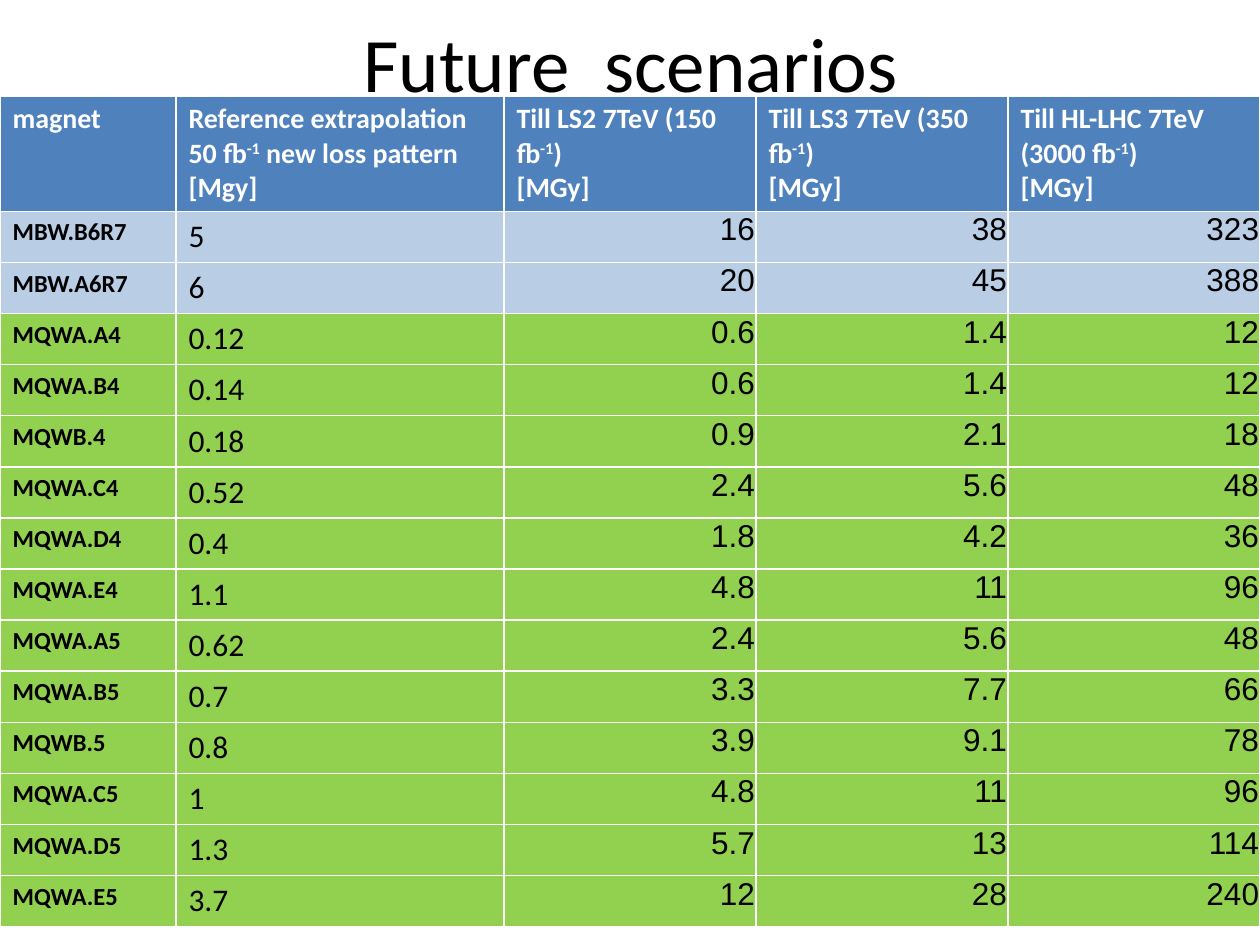
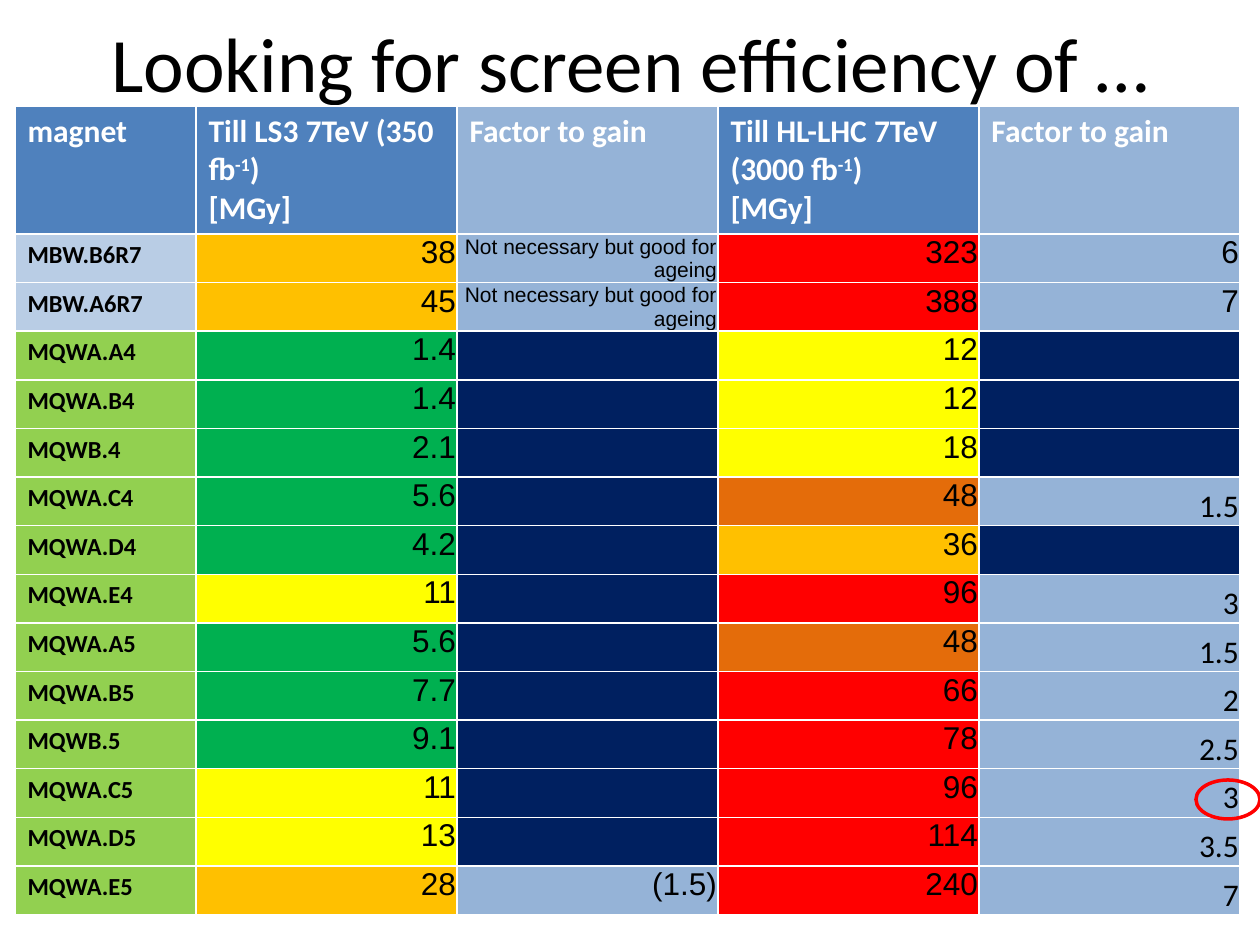
from collections import namedtuple
from dataclasses import dataclass

from pptx import Presentation
from pptx import util as u
from pptx.dml.color import RGBColor
from pptx.enum import shapes, text

PX_PER_INCH = 126
Box = namedtuple("Box", "left top width height")


@dataclass(frozen=True)
class Theme:
    body_font: str = "Calibri"
    number_font: str = "Arial"
    title_size: int = 44
    magnet_size: int = 14
    value_size: int = 18
    note_size: int = 12
    black: str = "000000"
    white: str = "FFFFFF"
    header: str = "4F81BD"
    factor: str = "95B3D7"
    no_factor: str = "002060"
    dipole: str = "B9CDE5"
    quadrupole: str = "92D050"
    worst: str = "FF0000"
    # Upper dose limit in MGy and the colour below it
    dose_scale: tuple = ((10, "00B050"), (20, "FFFF00"), (46, "FFC000"), (50, "E46C0A"))


THEME = Theme()
TITLE_BOX = Box(64, 6, 1134, 112)

# magnet, reference, till LS2, till LS3, till HL-LHC, factor LS3, factor HL-LHC
NOTE = "Not necessary but good for ageing"
MAGNETS = [
    ("MBW.B6R7", "5", "16", "38", "323", NOTE, "6"),
    ("MBW.A6R7", "6", "20", "45", "388", NOTE, "7"),
    ("MQWA.A4", "0.12", "0.6", "1.4", "12", "", ""),
    ("MQWA.B4", "0.14", "0.6", "1.4", "12", "", ""),
    ("MQWB.4", "0.18", "0.9", "2.1", "18", "", ""),
    ("MQWA.C4", "0.52", "2.4", "5.6", "48", "", "1.5"),
    ("MQWA.D4", "0.4", "1.8", "4.2", "36", "", ""),
    ("MQWA.E4", "1.1", "4.8", "11", "96", "", "3"),
    ("MQWA.A5", "0.62", "2.4", "5.6", "48", "", "1.5"),
    ("MQWA.B5", "0.7", "3.3", "7.7", "66", "", "2"),
    ("MQWB.5", "0.8", "3.9", "9.1", "78", "", "2.5"),
    ("MQWA.C5", "1", "4.8", "11", "96", "", "3"),
    ("MQWA.D5", "1.3", "5.7", "13", "114", "", "3.5"),
    ("MQWA.E5", "3.7", "12", "28", "240", "(1.5)", "7"),
]

# Text between carets is raised
LS2 = "Till LS2 7TeV (150 fb^-1^)\n[MGy]"
LS3 = "Till LS3 7TeV (350 fb^-1^)\n[MGy]"
HL = "Till HL-LHC 7TeV (3000 fb^-1^)\n[MGy]"
REFERENCE = "Reference extrapolation 50 fb^-1^ new loss pattern [Mgy]"
FACTOR = "Factor to gain"


def px(length):
    return u.Emu(round(length * 914400 / PX_PER_INCH))


def rgb(colour):
    return RGBColor.from_string(colour)


def style_font(font, size, colour=THEME.black, name=THEME.body_font, bold=False):
    font.size = u.Pt(size)
    font.name = name
    font.bold = bold
    font.color.rgb = rgb(colour)


def fill_cell(cell, colour):
    cell.fill.solid()
    cell.fill.fore_color.rgb = rgb(colour)


def add_titled_page(deck, title):
    page = deck.slides.add_slide(deck.slide_layouts[5])
    holder = page.shapes.title
    holder.left, holder.top, holder.width, holder.height = map(px, TITLE_BOX)
    frame = holder.text_frame
    frame.text = title
    frame.word_wrap = True
    frame.auto_size = text.MSO_AUTO_SIZE.NONE
    frame.vertical_anchor = text.MSO_ANCHOR.MIDDLE
    para = frame.paragraphs[0]
    para.alignment = text.PP_ALIGN.CENTER
    style_font(para.runs[0].font, THEME.title_size)
    return page


def add_magnet_table(page, box, header_height, widths, headings, heading_size):
    """Add the grid with its heading row and magnet column; return the table."""
    rows = len(MAGNETS)
    table = page.shapes.add_table(rows + 1, len(widths), *map(px, box)).table
    table.horz_banding = False
    for column, width in zip(table.columns, widths):
        column.width = px(width)
    for row in table.rows:
        row.height = px((box.height - header_height) / rows)
    table.rows[0].height = px(header_height)

    for cell, heading in zip(table.rows[0].cells, headings):
        write_heading(cell, heading, heading_size)
    for row, magnet in enumerate(MAGNETS, 1):
        write_left(table.cell(row, 0), magnet[0], family_colour(magnet),
                   THEME.magnet_size, bold=True)
    return table


def write_heading(cell, heading, size):
    fill_cell(cell, THEME.factor if heading == FACTOR else THEME.header)
    cell.text_frame.text = heading.replace("^", "")
    for para, line in zip(cell.text_frame.paragraphs, heading.split("\n")):
        para.text = ""
        for index, part in enumerate(line.split("^")):
            span = para.add_run()
            span.text = part
            style_font(span.font, size, THEME.white, bold=True)
            if index % 2:
                span.font._element.set("baseline", "30000")


def write_left(cell, value, colour, size, bold=False):
    fill_cell(cell, colour)
    cell.text_frame.text = value
    style_font(cell.text_frame.paragraphs[0].runs[0].font, size, bold=bold)


def write_right(cell, value, colour, size=THEME.value_size, name=THEME.number_font):
    fill_cell(cell, colour)
    cell.margin_left = cell.margin_right = cell.margin_top = px(1)
    cell.margin_bottom = 0
    para = cell.text_frame.paragraphs[0]
    para.text = value
    para.alignment = text.PP_ALIGN.RIGHT
    style_font(para.runs[0].font if value else para.font, size, name=name)


def family_colour(magnet):
    return THEME.dipole if magnet[0].startswith("MBW") else THEME.quadrupole


def dose_colour(dose):
    return next((colour for limit, colour in THEME.dose_scale if float(dose) < limit),
                THEME.worst)


def write_factor(cell, factor, low=False):
    """Write a gain factor; a low one sits at the cell's foot in the body font."""
    write_right(cell, factor, THEME.factor if factor else THEME.no_factor,
                THEME.note_size if factor == NOTE else THEME.value_size,
                THEME.body_font if low else THEME.number_font)
    if low:
        cell.vertical_anchor = text.MSO_ANCHOR.BOTTOM


def add_scenarios(page, box):
    table = add_magnet_table(page, box, 114, [176, 328, 252, 252, 252],
                             ["magnet", REFERENCE, LS2, LS3, HL], 16)
    for row, magnet in enumerate(MAGNETS, 1):
        colour = family_colour(magnet)
        write_left(table.cell(row, 1), magnet[1], colour, THEME.value_size)
        for column in (2, 3, 4):
            write_right(table.cell(row, column), magnet[column], colour)


def add_screen_efficiency(page, box):
    table = add_magnet_table(page, box, 127, [181, 261, 261, 261, 261],
                             ["magnet", LS3, FACTOR, HL, FACTOR], 18)
    for row, magnet in enumerate(MAGNETS, 1):
        ls3_dose, hl_dose, ls3_factor, hl_factor = magnet[3:]
        write_right(table.cell(row, 1), ls3_dose, dose_colour(ls3_dose))
        write_factor(table.cell(row, 2), ls3_factor)
        write_right(table.cell(row, 3), hl_dose, dose_colour(hl_dose))
        low = bool(hl_factor) and family_colour(magnet) == THEME.quadrupole
        write_factor(table.cell(row, 4), hl_factor, low)


def add_ring(page, box):
    ring = page.shapes.add_shape(shapes.MSO_SHAPE.OVAL, *map(px, box))
    ring.shadow.inherit = False
    ring.fill.background()
    ring.line.color.rgb = rgb(THEME.worst)
    ring.line.width = u.Pt(2)


def main():
    deck = Presentation()
    deck.slide_width, deck.slide_height = u.Inches(10), u.Inches(7.5)

    page = add_titled_page(deck, "Future  scenarios")
    add_scenarios(page, Box(0, 96, 1260, 829))

    page = add_titled_page(deck, "Looking for screen efficiency of …")
    add_screen_efficiency(page, Box(15, 106, 1225, 808))
    add_ring(page, Box(1196, 780, 64, 39))

    deck.save("out.pptx")


if __name__ == "__main__":
    main()
